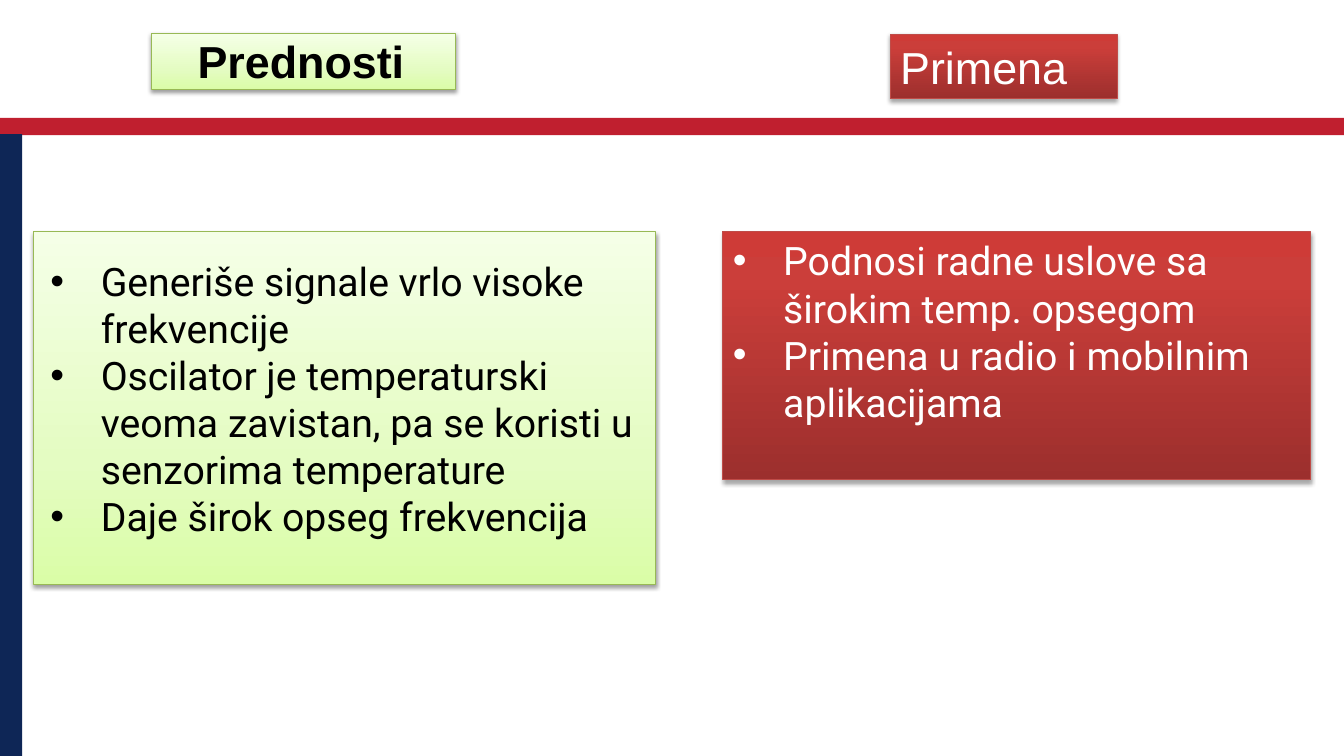
from lxml import etree
from pptx import Presentation
from pptx.dml.color import RGBColor
from pptx.enum.shapes import MSO_SHAPE
from pptx.enum.text import MSO_ANCHOR as Anchor, PP_ALIGN as Align
from pptx.oxml import parse_xml
from pptx.oxml.ns import nsdecls, qn
from pptx.util import Inches, Pt

COLORS = {
    "red_bar": "C01F2F",
    "navy_bar": "0E2656",
    "black": "000000",
    "white": "FFFFFF",
    "green_line": "98B955",
    "red_line": "BF4C48",
}
GREEN = {"stops": [(0, "DAFDA7"), (35, "E4FCC2"), (100, "F5FFE7")],
         "line": "green_line", "opacity": 38, "distance": 1.6}
RED = {"stops": [(0, "9C2F2D"), (80, "CB3E3A"), (100, "CE3B37")],
       "line": "red_line", "opacity": 35, "distance": 1.8}


class SlideBuilder:
    def __init__(self, slide):
        self.slide = slide
        self.shapes = slide.shapes

    def color(self, name):
        return RGBColor.from_string(COLORS[name])

    def bar(self, left, top, width, height, color):
        bar = self.shapes.add_shape(MSO_SHAPE.RECTANGLE, *map(Inches, (left, top, width, height)))
        bar.shadow.inherit = False
        bar.fill.solid()
        bar.fill.fore_color.rgb = self.color(color)
        bar.line.fill.background()

    def panel(self, left, top, width, height, theme):
        """Add a rectangle with an upward gradient and a soft shadow below."""
        panel = self.shapes.add_shape(MSO_SHAPE.RECTANGLE, *map(Inches, (left, top, width, height)))
        panel.shadow.inherit = False
        panel.line.color.rgb = self.color(theme["line"])
        panel.line.width = Pt(0.75)
        stops = "".join(
            f'<a:gs pos="{position * 1000}"><a:srgbClr val="{shade}"/></a:gs>'
            for position, shade in theme["stops"])
        properties = panel._element.spPr
        properties.find(qn("a:prstGeom")).addnext(parse_xml(
            f'<a:gradFill {nsdecls("a")} rotWithShape="1"><a:gsLst>{stops}</a:gsLst>'
            '<a:lin ang="16200000" scaled="0"/></a:gradFill>'))
        properties.find(qn("a:effectLst")).append(parse_xml(
            f'<a:outerShdw {nsdecls("a")} blurRad="{Pt(3.1)}" dist="{Pt(theme["distance"])}" '
            'dir="5400000" rotWithShape="0"><a:srgbClr val="000000">'
            f'<a:alpha val="{theme["opacity"] * 1000}"/></a:srgbClr></a:outerShdw>'))
        return panel

    def place(self, placeholder, left, top, width, height):
        """Position a placeholder above everything drawn so far, without insets."""
        placeholder.left, placeholder.top = Inches(left), Inches(top)
        placeholder.width, placeholder.height = Inches(width), Inches(height)
        self.shapes._spTree.append(placeholder._element)
        frame = placeholder.text_frame
        frame.margin_left = frame.margin_top = frame.margin_right = frame.margin_bottom = 0

    def add_text(self, holder, lines, size, font, color, bold=False, bullets=False):
        frame = holder.text_frame
        frame.word_wrap = True
        frame.vertical_anchor = Anchor.TOP
        for index, line in enumerate(lines):
            paragraph = frame.add_paragraph() if index else frame.paragraphs[0]
            paragraph.alignment = Align.LEFT
            paragraph.space_before = Pt(0)
            if bullets:
                self.bullet(paragraph)
            run = paragraph.add_run()
            run.text = line
            run.font.size = Pt(size)
            run.font.name = font
            run.font.bold = bold
            run.font.color.rgb = self.color(color)

    def bullet(self, paragraph):
        properties = paragraph._p.get_or_add_pPr()
        properties.set("marL", str(Inches(0.5)))
        properties.set("indent", str(-Inches(0.5)))
        etree.SubElement(properties, qn("a:buFont"), typeface="Arial")
        etree.SubElement(properties, qn("a:buChar"), char="•")


def main():
    deck = Presentation()
    deck.slide_width, deck.slide_height = Inches(13.33), Inches(7.5)
    builder = SlideBuilder(deck.slides.add_slide(deck.slide_layouts[1]))
    title, advantages = builder.slide.placeholders

    builder.bar(0, 1.17, 13.33, 0.17, "red_bar")
    builder.bar(0, 1.33, 0.22, 6.17, "navy_bar")

    builder.panel(1.5, 0.33, 3.02, 0.56, GREEN)
    builder.place(title, 1.96, 0.33, 2.56, 0.56)
    builder.add_text(title, ["Prednosti"], 32, "Arial", "black", bold=True)

    builder.panel(0.33, 2.3, 6.17, 3.5, GREEN)
    builder.place(advantages, 0.5, 2.55, 5.82, 2.83)
    builder.add_text(advantages, [
        "Generiše signale vrlo visoke frekvencije",
        "Oscilator je temperaturski veoma zavistan, pa se koristi u senzorima temperature",
        "Daje širok opseg frekvencija",
    ], 28, "Roboto", "black", bullets=True)

    application_heading = builder.panel(8.83, 0.34, 2.25, 0.64, RED)
    builder.add_text(application_heading, ["Primena"], 32, "Arial", "white")

    applications = builder.panel(7.17, 2.3, 5.83, 2.46, RED)
    builder.add_text(applications, [
        "Podnosi radne uslove sa širokim temp. opsegom",
        "Primena u radio i mobilnim aplikacijama",
    ], 28, "Roboto", "white", bullets=True)

    deck.save("out.pptx")


if __name__ == "__main__":
    main()
